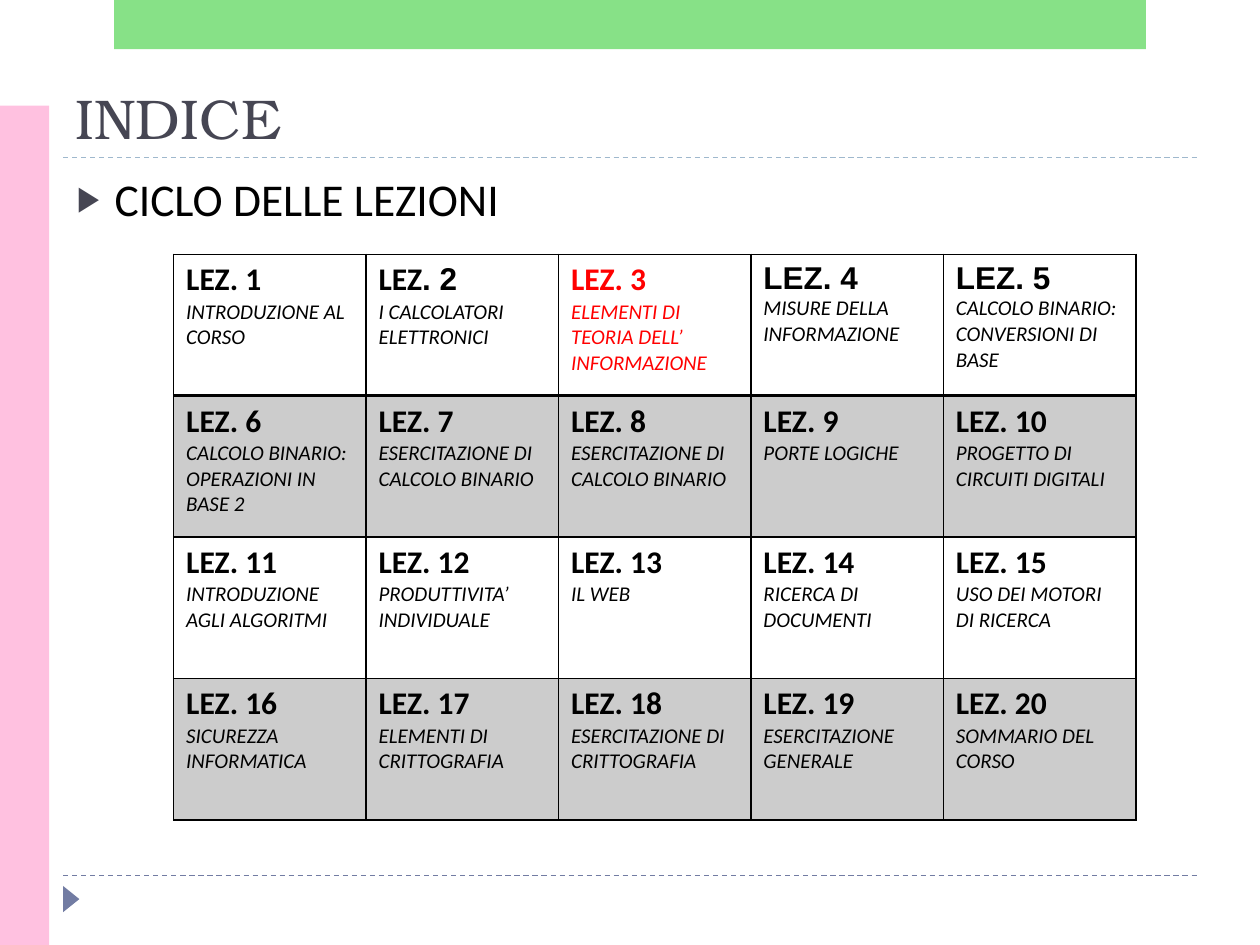
import pptx
import pptx.dml.color
import pptx.enum.dml
import pptx.enum.shapes
import pptx.enum.text
import pptx.oxml
import pptx.oxml.ns
import pptx.util
from lxml import etree

Cm = pptx.util.Cm
Pt = pptx.util.Pt
RGBColor = pptx.dml.color.RGBColor
Shape = pptx.enum.shapes.MSO_SHAPE
Anchor = pptx.enum.text.MSO_ANCHOR
qn = pptx.oxml.ns.qn

BLACK = RGBColor(0x00, 0x00, 0x00)
RED = RGBColor(0xFF, 0x00, 0x00)
SLATE = RGBColor(0x46, 0x46, 0x53)
BLUE = RGBColor(0x72, 0x7C, 0xA3)
LIGHT_BLUE = RGBColor(0x9F, 0xB8, 0xCD)
PINK = RGBColor(0xFF, 0xC1, 0xE0)
GREEN = RGBColor(0x62, 0xD8, 0x62)

TOPICS = [
    "INTRODUZIONE AL CORSO",
    "I CALCOLATORI \vELETTRONICI",
    "ELEMENTI DI TEORIA DELL’\vINFORMAZIONE",
    "MISURE DELLA INFORMAZIONE",
    "CALCOLO BINARIO: CONVERSIONI DI BASE",
    "CALCOLO BINARIO: OPERAZIONI IN BASE 2",
    "ESERCITAZIONE DI CALCOLO BINARIO",
    "ESERCITAZIONE DI CALCOLO BINARIO",
    "PORTE LOGICHE",
    "PROGETTO DI CIRCUITI DIGITALI",
    "INTRODUZIONE AGLI ALGORITMI",
    "PRODUTTIVITA’ INDIVIDUALE",
    "IL WEB",
    "RICERCA DI DOCUMENTI",
    "USO DEI MOTORI DI RICERCA",
    "SICUREZZA INFORMATICA",
    "ELEMENTI DI CRITTOGRAFIA",
    "ESERCITAZIONE DI CRITTOGRAFIA",
    "ESERCITAZIONE GENERALE",
    "SOMMARIO DEL CORSO",
]
COLUMNS = 5
ROWS = len(TOPICS) // COLUMNS
CURRENT_LESSON = 3
ARIAL_LESSONS = (4, 5)


class LessonSlide:
    title_font = "TeX Gyre Bonum"
    body_font = "Calibri"
    accent_font = "Arial"

    def __init__(self, presentation):
        self.slide = presentation.slides.add_slide(presentation.slide_layouts[6])

    def fill(self, target, properties, color, opacity):
        """Fill a shape or cell, given with its properties element; opacity in percent."""
        target.fill.solid()
        target.fill.fore_color.rgb = color
        if opacity < 100:
            color_element = properties.find(qn("a:solidFill"))[0]
            etree.SubElement(color_element, qn("a:alpha")).set("val", str(opacity * 1000))

    def shape(self, kind, left, top, width, height, color, opacity=100, rotation=0):
        shape = self.slide.shapes.add_shape(
            kind, Cm(left), Cm(top), Cm(width), Cm(height))
        shape.shadow.inherit = False
        shape.line.fill.background()
        shape.rotation = rotation
        self.fill(shape, shape._element.spPr, color, opacity)

    def dashed_rule(self, top, color):
        connector = self.slide.shapes.add_connector(
            pptx.enum.shapes.MSO_CONNECTOR.STRAIGHT,
            Cm(1.27), Cm(top), Cm(24.13), Cm(top))
        connector.line.color.rgb = color
        connector.line.width = Pt(0.75)
        connector.line.dash_style = pptx.enum.dml.MSO_LINE.DASH
        etree.SubElement(connector._element.spPr, qn("a:effectLst"))

    def style(self, paragraph, size, color, name=None, bold=False, italic=False):
        font = paragraph.font
        font.name = name or self.body_font
        font.size = Pt(size)
        font.color.rgb = color
        font.bold = bold
        font.italic = italic

    def text(self, text, left, top, width, height, size, color,
             name=None, anchor=Anchor.TOP, bullet=False):
        box = self.slide.shapes.add_textbox(Cm(left), Cm(top), Cm(width), Cm(height))
        frame = box.text_frame
        frame.word_wrap = True
        frame.vertical_anchor = anchor
        paragraph = frame.paragraphs[0]
        paragraph.text = text
        if bullet:
            self.bullet(paragraph)
        self.style(paragraph, size, color, name)

    def bullet(self, paragraph):
        properties = paragraph._p.get_or_add_pPr()
        indent = Cm(0.76)
        properties.set("marL", str(indent))
        properties.set("indent", str(-indent))
        color = etree.SubElement(properties, qn("a:buClr"))
        etree.SubElement(color, qn("a:srgbClr")).set("val", str(SLATE))
        etree.SubElement(properties, qn("a:buSzPct")).set("val", "76000")
        etree.SubElement(properties, qn("a:buFont")).set("typeface", self.accent_font)
        etree.SubElement(properties, qn("a:buChar")).set("char", "▶")

    def borders(self, properties, **widths):
        """Draw black cell borders, given as side=points in the order L, R, T, B."""
        for side, width in widths.items():
            line = etree.SubElement(properties, qn(f"a:ln{side}"), w=str(Pt(width)))
            solid = etree.SubElement(line, qn("a:solidFill"))
            etree.SubElement(solid, qn("a:srgbClr")).set("val", str(BLACK))

    def lesson(self, cell, number, topic):
        color = RED if number == CURRENT_LESSON else BLACK
        heading = cell.text_frame.paragraphs[0]
        name = self.accent_font if number in ARIAL_LESSONS else self.body_font
        if number == 2:
            heading.add_run().text = "LEZ"
            number_run = heading.add_run()
            number_run.text = ". 2"
            number_run.font.name = self.accent_font
        else:
            heading.text = f"LEZ. {number}"
        self.style(heading, 18, color, name, bold=True)
        description = cell.text_frame.add_paragraph()
        description.text = topic
        self.style(description, 12, color, italic=True)

    def lesson_table(self, left, top, column_width, row_height):
        table = self.slide.shapes.add_table(
            ROWS, COLUMNS, Cm(left), Cm(top),
            Cm(column_width * COLUMNS), Cm(row_height * ROWS)).table
        table.first_row = False
        table.horz_banding = False
        for index, topic in enumerate(TOPICS):
            row, column = divmod(index, COLUMNS)
            cell = table.cell(row, column)
            properties = cell._tc.get_or_add_tcPr()
            self.borders(properties, L=1, R=1,
                         T=2 if row == 1 else 1, B=2 if row == 0 else 1)
            if row % 2:
                self.fill(cell, properties, BLACK, 20)
            else:
                cell.fill.background()
            self.lesson(cell, index + 1, topic)


def main():
    presentation = pptx.Presentation()
    presentation.slide_width = Cm(25.4)
    presentation.slide_height = Cm(19.05)
    page = LessonSlide(presentation)
    page.dashed_rule(17.65, BLUE)
    page.dashed_rule(3.17, LIGHT_BLUE)
    page.shape(Shape.ISOSCELES_TRIANGLE, 1.17, 17.96, 0.53, 0.33, BLUE, rotation=90)
    page.shape(Shape.RECTANGLE, 0, 2.13, 0.99, 16.92, PINK)
    page.shape(Shape.RECTANGLE, 2.3, 0, 20.8, 0.99, GREEN, opacity=76)
    page.text("INDICE", 1.27, 1.38, 22.86, 1.78, 32, SLATE,
              page.title_font, Anchor.BOTTOM)
    page.text("CICLO DELLE LEZIONI", 1.3, 3.33, 22.86, 2, 26, BLACK, bullet=True)
    page.lesson_table(3.5, 5.13, 3.88, 2.85)
    presentation.save("out.pptx")


if __name__ == "__main__":
    main()
